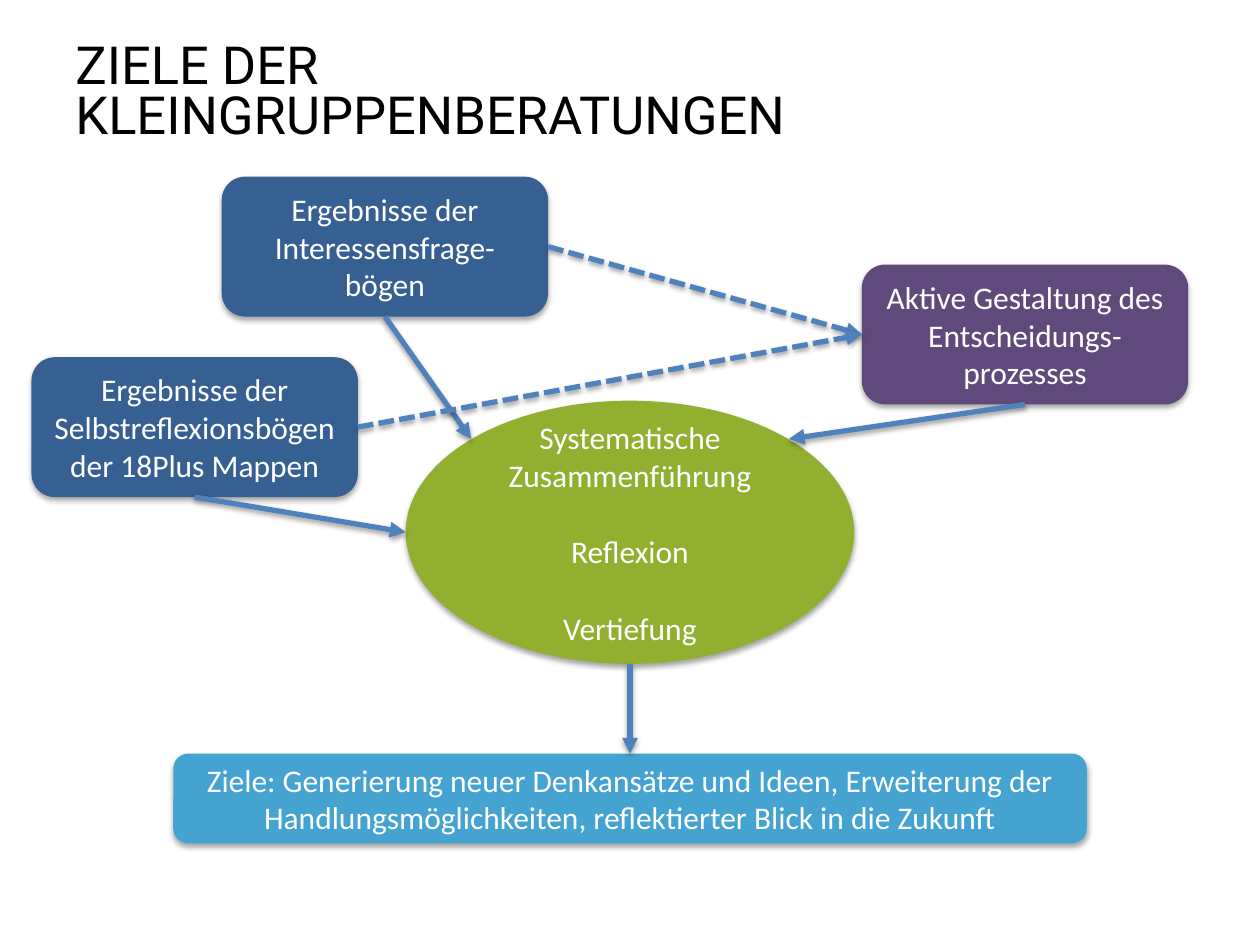
from dataclasses import dataclass

from lxml import etree
from pptx import Presentation
from pptx.dml.color import RGBColor
from pptx.enum.dml import MSO_LINE
from pptx.enum.shapes import MSO_CONNECTOR, MSO_SHAPE
from pptx.enum.text import MSO_ANCHOR, PP_ALIGN
from pptx.oxml.ns import qn
from pptx.util import Inches, Pt

ROUNDED, OVAL = MSO_SHAPE.ROUNDED_RECTANGLE, MSO_SHAPE.OVAL
STRAIGHT, DASHED = MSO_CONNECTOR.STRAIGHT, MSO_LINE.SQUARE_DOT
CENTER, MIDDLE, TOP = PP_ALIGN.CENTER, MSO_ANCHOR.MIDDLE, MSO_ANCHOR.TOP

TOP_MID, BOTTOM_MID = (0.5, 0), (0.5, 1)
LEFT_MID, RIGHT_MID = (0, 0.5), (1, 0.5)
OVAL_TOP_LEFT, OVAL_TOP_RIGHT = (0.146, 0.146), (0.854, 0.146)


@dataclass
class Theme:
    title: str = "000000"
    text: str = "FFFFFF"
    results: str = "376092"
    decision: str = "604A7B"
    synthesis: str = "92AF2F"
    goals: str = "45A3D2"
    arrow: str = "4F81BD"
    shadow: str = "000000"
    title_font: str = "Roboto"
    body_font: str = "Calibri"
    title_size: int = 30
    body_size: int = 18
    paragraph_gap: int = 22
    arrow_width: int = 3


class Deck:
    def __init__(self, theme):
        self.theme = theme
        self.prs = Presentation()
        self.prs.slide_width, self.prs.slide_height = Inches(10), Inches(7.5)
        self.s = self.prs.slides.add_slide(self.prs.slide_layouts[6])

    def place(self, x, y, w, h):
        width, height = self.prs.slide_width, self.prs.slide_height
        return [int(share * side / 100) for share, side in
                ((x, width), (y, height), (w, width), (h, height))]

    def font(self, p, name, size, color):
        p.font.name, p.font.size = name, Pt(size)
        p.font.color.rgb = RGBColor.from_string(color)

    def shadow(self, sp, alpha, distance):
        effects = etree.SubElement(sp._element.spPr, qn("a:effectLst"))
        outer = etree.SubElement(
            effects, qn("a:outerShdw"), blurRad=str(Pt(3.1)),
            dist=str(Pt(distance)), dir="5400000", rotWithShape="0")
        color = etree.SubElement(outer, qn("a:srgbClr"), val=self.theme.shadow)
        etree.SubElement(color, qn("a:alpha"), val=str(alpha * 1000))

    def title(self, text, *box):
        tf = self.s.shapes.add_textbox(*self.place(*box)).text_frame
        tf.word_wrap, tf.vertical_anchor = True, TOP
        p = tf.paragraphs[0]
        p.text, p.line_spacing = text, 0.8
        self.font(p, self.theme.title_font, self.theme.title_size, self.theme.title)

    def node(self, kind, color, lines, *box):
        sp = self.s.shapes.add_shape(kind, *self.place(*box))
        sp.fill.solid()
        sp.fill.fore_color.rgb = RGBColor.from_string(color)
        sp.line.fill.background()
        self.shadow(sp, 35, 1.8)
        tf = sp.text_frame
        tf.word_wrap, tf.vertical_anchor = True, MIDDLE
        for i, line in enumerate(lines):
            p = tf.add_paragraph() if i else tf.paragraphs[0]
            p.text, p.alignment = line, CENTER
            if i:
                p.space_before = Pt(self.theme.paragraph_gap)
            self.font(p, self.theme.body_font, self.theme.body_size, self.theme.text)
        return sp

    def arrow(self, start, start_site, end, end_site, dashed=False):
        points = [int(value) for sp, (fx, fy) in ((start, start_site), (end, end_site))
                  for value in (sp.left + fx * sp.width, sp.top + fy * sp.height)]
        c = self.s.shapes.add_connector(STRAIGHT, *points)
        c.line.color.rgb = RGBColor.from_string(self.theme.arrow)
        c.line.width = Pt(self.theme.arrow_width)
        if dashed:
            c.line.dash_style = DASHED
        etree.SubElement(c._element.spPr.find(qn("a:ln")), qn("a:tailEnd"),
                         type="triangle")
        self.shadow(c, 38, 1.6)


def main():
    theme = Theme()
    deck = Deck(theme)
    box_size = (25.9, 14.8)

    deck.title("ZIELE DER\vKLEINGRUPPENBERATUNGEN", 5, 4, 90, 16.67)
    synthesis = deck.node(
        OVAL, theme.synthesis,
        ["Systematische Zusammenführung", "Reflexion", "Vertiefung"],
        32.2, 42.4, 35.6, 27.85)
    reflection = deck.node(
        ROUNDED, theme.results,
        ["Ergebnisse der Selbstreflexionsbögen der 18Plus Mappen"],
        2.5, 37.8, *box_size)
    interests = deck.node(
        ROUNDED, theme.results, ["Ergebnisse der Interessensfrage-bögen"],
        17.6, 18.7, *box_size)
    decision = deck.node(
        ROUNDED, theme.decision, ["Aktive Gestaltung des Entscheidungs-prozesses"],
        68.4, 28, *box_size)
    goals = deck.node(
        ROUNDED, theme.goals,
        ["Ziele: Generierung neuer Denkansätze und Ideen, Erweiterung der "
         "Handlungsmöglichkeiten, reflektierter Blick in die Zukunft"],
        13.75, 79.75, 72.5, 9.5)

    deck.arrow(interests, BOTTOM_MID, synthesis, OVAL_TOP_LEFT)
    deck.arrow(decision, BOTTOM_MID, synthesis, OVAL_TOP_RIGHT)
    deck.arrow(reflection, BOTTOM_MID, synthesis, LEFT_MID)
    deck.arrow(synthesis, BOTTOM_MID, goals, TOP_MID)
    for source in (interests, reflection):
        deck.arrow(source, RIGHT_MID, decision, LEFT_MID, dashed=True)

    deck.prs.save("out.pptx")


if __name__ == "__main__":
    main()
